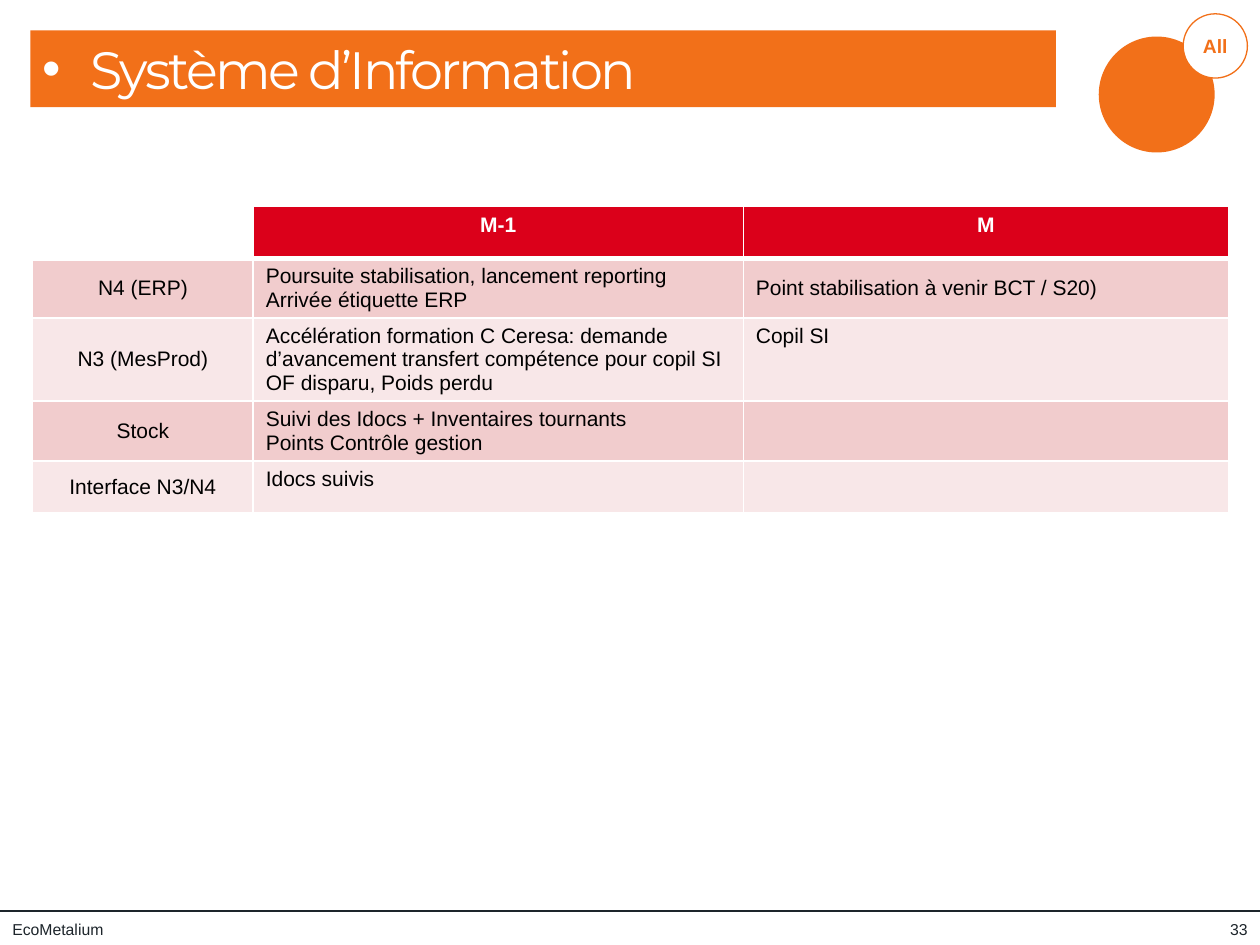
from lxml import etree
from pptx import Presentation
from pptx.dml.color import RGBColor
from pptx.enum.shapes import MSO_CONNECTOR, MSO_SHAPE
from pptx.enum.text import MSO_ANCHOR as ANCHOR, MSO_AUTO_SIZE, PP_ALIGN as ALIGN
from pptx.oxml.ns import qn
from pptx.util import Inches, Pt

ORANGE, RED, INK, WHITE, BLACK = "F27019", "DB001A", "1D252B", "FFFFFF", "000000"
BANDS = ["F1CCCD", "F8E7E8"]

COLUMN_WIDTHS = [1.75, 3.89, 3.85]
ROW_HEIGHTS = [0.41, 0.47, 0.66, 0.47, 0.41]
HEADERS = ["", "M-1", "M"]
TOPICS = [
    ["N4 (ERP)", "Poursuite stabilisation, lancement reporting\nArrivée étiquette ERP",
     "Point stabilisation à venir BCT / S20)"],
    ["N3 (MesProd)", "Accélération formation C Ceresa: demande d’avancement transfert "
     "compétence pour copil SI\nOF disparu, Poids perdu", "Copil SI"],
    ["Stock", "Suivi des Idocs + Inventaires tournants\nPoints Contrôle gestion", ""],
    ["Interface N3/N4", "Idocs suivis", ""],
]
CENTRED_CELLS = {(1, 2)}


def rgb(value):
    return RGBColor.from_string(value)


def set_attributes(target, values):
    for key, value in values.items():
        setattr(target, key, value)


def write(frame, text, size, color, align=ALIGN.LEFT, bold=False, font="Arial"):
    frame.text = text
    for paragraph in frame.paragraphs:
        paragraph.alignment = align
        for run in paragraph.runs:
            set_attributes(run.font, dict(size=Pt(size), bold=bold, name=font))
            run.font.color.rgb = rgb(color)


def add_circle(slide, left, top, diameter, fill, line=None):
    circle = slide.shapes.add_shape(MSO_SHAPE.OVAL, Inches(left), Inches(top),
                                    Inches(diameter), Inches(diameter))
    circle.shadow.inherit = False
    circle.fill.solid()
    circle.fill.fore_color.rgb = rgb(fill)
    if line:
        circle.line.color.rgb = rgb(line)
        circle.line.width = Pt(0.75)
    else:
        circle.line.fill.background()
    return circle


def add_badge(slide, left, top):
    """Large disc with a small labelled circle over its upper right."""
    add_circle(slide, left, top + 0.18, 0.92, ORANGE)
    label = add_circle(slide, left + 0.67, top, 0.51, WHITE, ORANGE)
    set_attributes(label.text_frame, dict(margin_left=0, margin_right=0,
                                          vertical_anchor=ANCHOR.MIDDLE))
    write(label.text_frame, "All", 11, ORANGE, ALIGN.CENTER, bold=True)


def add_title_bar(slide, left, top, width, height):
    title = slide.shapes.title
    set_attributes(title, dict(left=Inches(left), top=Inches(top),
                               width=Inches(width), height=Inches(height)))
    title.fill.solid()
    title.fill.fore_color.rgb = rgb(ORANGE)
    frame = title.text_frame
    set_attributes(frame, dict(word_wrap=True, auto_size=MSO_AUTO_SIZE.NONE,
                               vertical_anchor=ANCHOR.TOP))
    write(frame, "Système d’Information", 30, WHITE, font="Montserrat")
    paragraph = frame.paragraphs[0]
    properties = paragraph._p.get_or_add_pPr()
    indent = Inches(0.38)
    properties.set("marL", str(indent))
    properties.set("indent", str(-indent))
    etree.SubElement(properties, qn("a:buFont"), typeface="Arial")
    etree.SubElement(properties, qn("a:buChar"), char="•")
    paragraph.runs[0].font._element.set("spc", "-150")


def add_borders(cell, bottom_width):
    properties = cell._tc.get_or_add_tcPr()
    for side, width in dict(L=1, R=1, T=1, B=bottom_width).items():
        border = etree.SubElement(properties, qn(f"a:ln{side}"), w=str(Pt(width)))
        fill = etree.SubElement(border, qn("a:solidFill"))
        etree.SubElement(fill, qn("a:srgbClr"), val=WHITE)


def format_cell(cell, text, row, column):
    header, topic = row == 0, column == 0
    add_borders(cell, 3 if header else 1)
    cell.fill.solid()
    band = BANDS[(row - 1) % 2]
    cell.fill.fore_color.rgb = rgb((WHITE if topic else RED) if header else band)
    middle = not header and (topic or (row, column) in CENTRED_CELLS)
    cell.vertical_anchor = ANCHOR.MIDDLE if middle else ANCHOR.TOP
    write(cell.text_frame, text, 12, WHITE if header else BLACK,
          ALIGN.CENTER if header or topic else ALIGN.LEFT, bold=header)


def add_topic_table(slide, left, top):
    rows = [HEADERS, *TOPICS]
    table = slide.shapes.add_table(
        len(rows), len(HEADERS), Inches(left), Inches(top),
        Inches(sum(COLUMN_WIDTHS)), Inches(sum(ROW_HEIGHTS))).table
    for column, width in zip(table.columns, COLUMN_WIDTHS):
        column.width = Inches(width)
    for row, height in zip(table.rows, ROW_HEIGHTS):
        row.height = Inches(height)
    for r, texts in enumerate(rows):
        for c, text in enumerate(texts):
            format_cell(table.cell(r, c), text, r, c)


def add_footer(slide, left, top, width):
    rule = slide.shapes.add_connector(MSO_CONNECTOR.STRAIGHT, Inches(left), Inches(top),
                                      Inches(left + width), Inches(top))
    rule.line.color.rgb = rgb(INK)
    rule.line.width = Pt(1.5)
    etree.SubElement(rule._element.spPr, qn("a:effectLst"))
    number_width = 0.49
    for text, offset, box_width, align in [
            ("EcoMetalium", 0, 3.44, ALIGN.LEFT),
            ("33", width - number_width, number_width, ALIGN.RIGHT)]:
        box = slide.shapes.add_textbox(Inches(left + offset), Inches(top + 0.02),
                                       Inches(box_width), Inches(0.25))
        set_attributes(box.text_frame, dict(word_wrap=True, vertical_anchor=ANCHOR.MIDDLE))
        write(box.text_frame, text, 9, INK, align)


def main():
    presentation = Presentation()
    set_attributes(presentation, dict(slide_width=Inches(10), slide_height=Inches(7.5)))
    slide = presentation.slides.add_slide(presentation.slide_layouts.get_by_name("Title Only"))
    add_title_bar(slide, 0.24, 0.24, 8.14, 0.61)
    add_badge(slide, 8.72, 0.11)
    add_topic_table(slide, 0.26, 1.64)
    add_footer(slide, 0, 7.23, 10)
    presentation.save("out.pptx")


if __name__ == "__main__":
    main()
